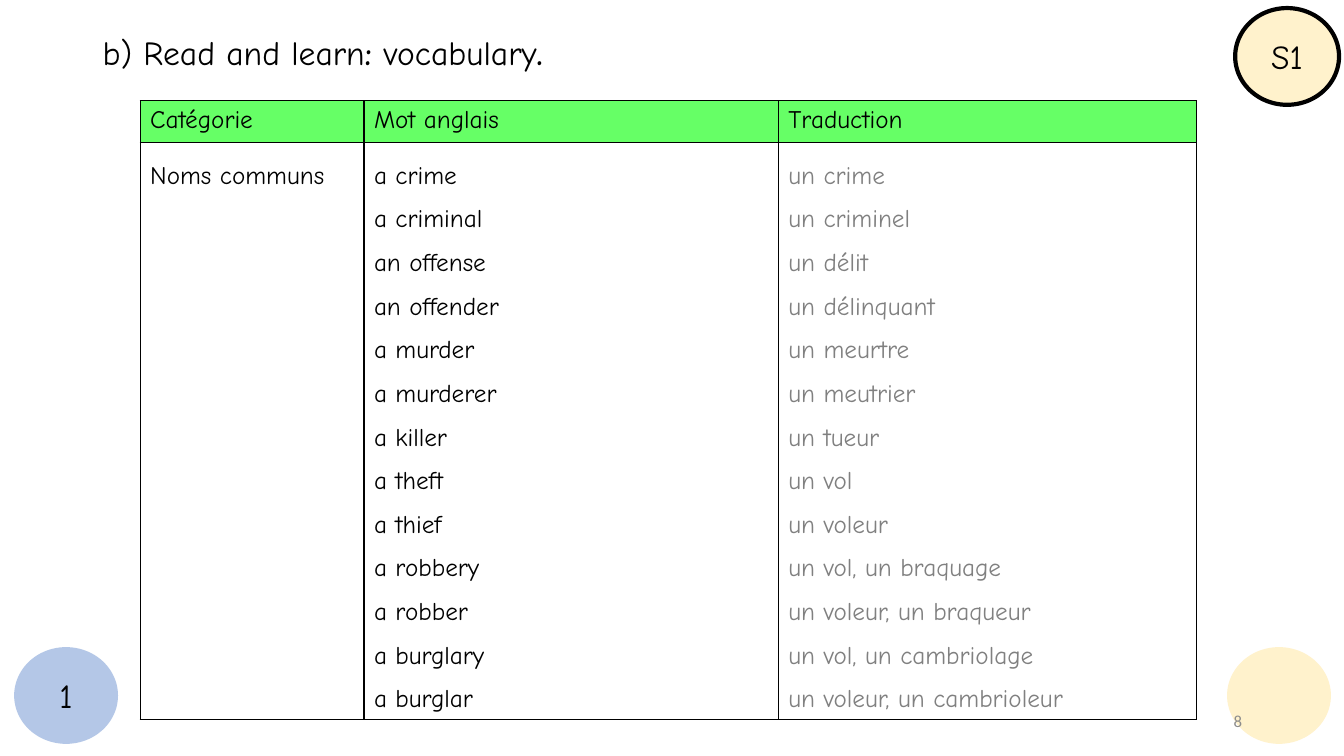
"""Build a vocabulary slide with a word table and round badges."""
import pptx
import pptx.util
import pptx.dml.color
import pptx.enum.shapes
import pptx.enum.text
import pptx.oxml
import pptx.oxml.ns

ALIGN = pptx.enum.text.PP_ALIGN


def tint(code):
    return pptx.dml.color.RGBColor.from_string(code)


def write(par, text, size=18, color="000000", font="Comic Neue", bold=False,
          align=ALIGN.LEFT, space=1.0):
    par.alignment, par.line_spacing = align, space
    run = par.add_run()
    run.text = text
    run.font.size = pptx.util.Pt(size)
    run.font.name, run.font.bold = font, bold
    run.font.color.rgb = tint(color)


deck = pptx.Presentation()
deck.slide_width = pptx.util.Inches(13.33)
deck.slide_height = pptx.util.Inches(7.5)
col, row = deck.slide_width // 100, deck.slide_height // 100
slide = deck.slides.add_slide(deck.slide_layouts[6])

heads = ["Catégorie", "Mot anglais", "Traduction"]
words = [
    ("a crime", "un crime"),
    ("a criminal", "un criminel"),
    ("an offense", "un délit"),
    ("an offender", "un délinquant"),
    ("a murder", "un meurtre"),
    ("a murderer", "un meutrier"),
    ("a killer", "un tueur"),
    ("a theft", "un vol"),
    ("a thief", "un voleur"),
    ("a robbery", "un vol, un braquage"),
    ("a robber", "un voleur, un braqueur"),
    ("a burglary", "un vol, un cambriolage"),
    ("a burglar", "un voleur, un cambrioleur"),
]
lists = [["Noms communs"], *zip(*words)]
inks = ["000000", "000000", "808080"]
wides = [int(share * col) for share in (16.65, 30.83, 31.13)]
highs = [int(share * row) for share in (5.47, 76.27)]

grid = slide.shapes.add_table(2, 3, int(10.43 * col), int(13.33 * row),
                              sum(wides), sum(highs)).table
grid.first_row = grid.horz_banding = False
for line, high in zip(grid.rows, highs):
    line.height = high
for n, (wide, head, terms, ink) in enumerate(zip(wides, heads, lists, inks)):
    grid.columns[n].width = wide
    top, body = grid.cell(0, n), grid.cell(1, n)
    top.fill.solid()
    top.fill.fore_color.rgb = tint("66FF66")
    body.fill.background()
    write(top.text_frame.paragraphs[0], head)
    for k, term in enumerate(terms):
        frame = body.text_frame
        par = frame.add_paragraph() if k else frame.paragraphs[0]
        write(par, term, color=ink, space=1.5)

for cell in grid.iter_cells():
    props = cell._tc.get_or_add_tcPr()
    for k, side in enumerate("LRTB"):
        props.insert(k, pptx.oxml.parse_xml(
            f'<a:ln{side} {pptx.oxml.ns.nsdecls("a")} w="12700"><a:solidFill>'
            f'<a:srgbClr val="000000"/></a:solidFill></a:ln{side}>'))

for left, top, fill, edge, label in [
    (91.9, 1.07, "FFF2CC", 3, "S1"),
    (91.3, 85.6, "FFF2CC", 0, ""),
    (1.05, 85.6, "B4C7E7", 0, "1"),
]:
    badge = slide.shapes.add_shape(
        pptx.enum.shapes.MSO_SHAPE.OVAL, int(left * col), int(top * row),
        int(7.73 * col), int(12.8 * row))
    badge.shadow.inherit = False
    badge.fill.solid()
    badge.fill.fore_color.rgb = tint(fill)
    if edge:
        badge.line.color.rgb = tint("000000")
        badge.line.width = pptx.util.Pt(edge)
    else:
        badge.line.fill.background()
    if label:
        badge.text_frame.vertical_anchor = pptx.enum.text.MSO_ANCHOR.MIDDLE
        write(badge.text_frame.paragraphs[0], label, size=24, align=ALIGN.CENTER)

title = [("b) Read and learn", False), (": ", True), ("vocabulary", False), (".", True)]
for left, top, wide, high, runs, style in [
    (6.9, 2.53, 86.27, 9.47, title, dict(size=24, space=0.9)),
    (70.67, 92.67, 22.5, 5.33, [("8", False)],
     dict(size=12, color="8C8C8C", font="Calibri", align=ALIGN.RIGHT)),
]:
    frame = slide.shapes.add_textbox(int(left * col), int(top * row),
                                     int(wide * col), int(high * row)).text_frame
    frame.word_wrap = True
    frame.vertical_anchor = pptx.enum.text.MSO_ANCHOR.MIDDLE
    for text, bold in runs:
        write(frame.paragraphs[0], text, bold=bold, **style)

deck.save("out.pptx")
